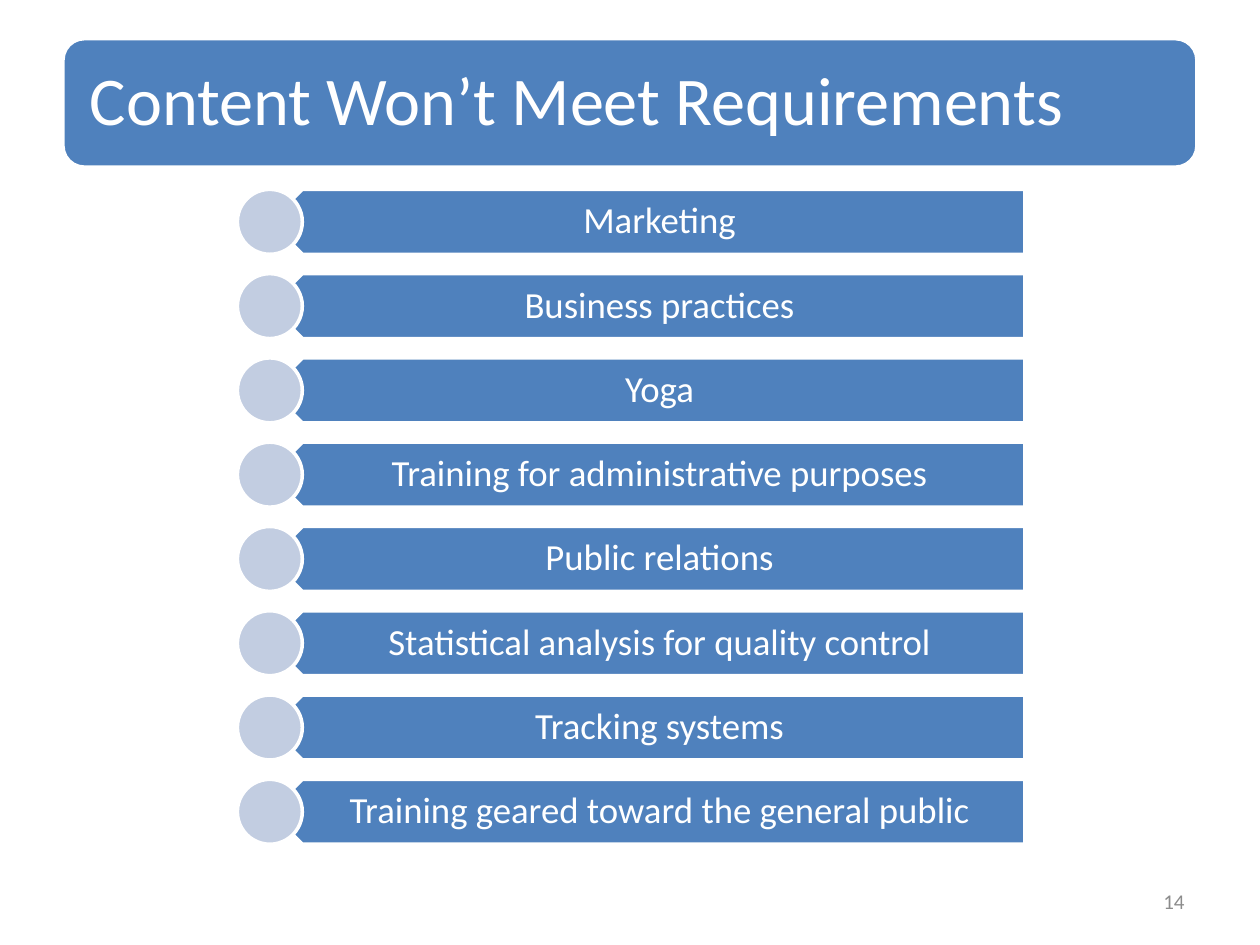
from dataclasses import dataclass

import pptx
import pptx.dml.color
import pptx.enum.shapes
import pptx.enum.text
import pptx.util

Pt = pptx.util.Pt
Shape = pptx.enum.shapes.MSO_SHAPE
Align = pptx.enum.text.PP_ALIGN

BLUE = "4F81BD"
PALE_BLUE = "C2CDE1"
WHITE = "FFFFFF"
GRAY = "8C8C8C"

TOPICS = [
    "Marketing",
    "Business practices",
    "Yoga",
    "Training for administrative purposes",
    "Public relations",
    "Statistical analysis for quality control",
    "Tracking systems",
    "Training geared toward the general public",
]
FIRST_TOP = 108.2
ROW_PITCH = 48.16
ROW_HEIGHT = 37.1


@dataclass
class Area:
    left: float
    top: float
    width: float
    height: float

    def lengths(self) -> list:
        return [Pt(value) for value in (self.left, self.top, self.width, self.height)]


@dataclass
class TextStyle:
    size: float
    color: str
    align: Align
    insets: tuple = (7.2, 3.6, 7.2, 3.6)
    line_spacing: float = 1.0


TITLE = TextStyle(39, WHITE, Align.LEFT, (11.7, 11.7, 11.7, 11.7), 0.9)
TOPIC = TextStyle(21, WHITE, Align.CENTER, (16.4, 6.3, 11.8, 6.3), 0.9)
PAGE_NUMBER = TextStyle(12, GRAY, Align.RIGHT)


def rgb(code: str) -> pptx.dml.color.RGBColor:
    return pptx.dml.color.RGBColor.from_string(code)


def draw_shape(page, kind: Shape, area: Area, fill: str, rotation: float = 0) -> None:
    shape = page.shapes.add_shape(kind, *area.lengths())
    shape.shadow.inherit = False
    shape.rotation = rotation
    shape.fill.solid()
    shape.fill.fore_color.rgb = rgb(fill)
    shape.line.color.rgb = rgb(WHITE)
    shape.line.width = Pt(2)


def draw_text(page, text: str, area: Area, style: TextStyle) -> None:
    box = page.shapes.add_textbox(*area.lengths())
    frame = box.text_frame
    frame.word_wrap = True
    frame.vertical_anchor = pptx.enum.text.MSO_ANCHOR.MIDDLE
    (frame.margin_left, frame.margin_top,
     frame.margin_right, frame.margin_bottom) = map(Pt, style.insets)
    para = frame.paragraphs[0]
    para.text = text
    para.alignment = style.align
    para.line_spacing = style.line_spacing
    para.font.name = "Calibri"
    para.font.size = Pt(style.size)
    para.font.color.rgb = rgb(style.color)


def draw_topic(page, text: str, top: float) -> None:
    bar = Area(154.2, top, 431.4, ROW_HEIGHT)
    draw_shape(page, Shape.PENTAGON, bar, BLUE, 180)
    draw_text(page, text, Area(163.5, top, 422.1, ROW_HEIGHT), TOPIC)
    circle = Area(bar.left - ROW_HEIGHT / 2, top, ROW_HEIGHT, ROW_HEIGHT)
    draw_shape(page, Shape.OVAL, circle, PALE_BLUE)


def main() -> None:
    deck = pptx.Presentation()
    deck.slide_width = Pt(720)
    deck.slide_height = Pt(540)
    page = deck.slides.add_slide(deck.slide_layouts[6])

    draw_shape(page, Shape.ROUNDED_RECTANGLE, Area(36, 22.1, 648, 73.4), BLUE)
    draw_text(page, "Content Won’t Meet Requirements", Area(39.6, 25.7, 640.8, 66.2), TITLE)
    for row, topic in enumerate(TOPICS):
        draw_topic(page, topic, FIRST_TOP + row * ROW_PITCH)
    draw_text(page, "14", Area(516, 500.5, 168, 28.75), PAGE_NUMBER)

    deck.save("out.pptx")


if __name__ == "__main__":
    main()
